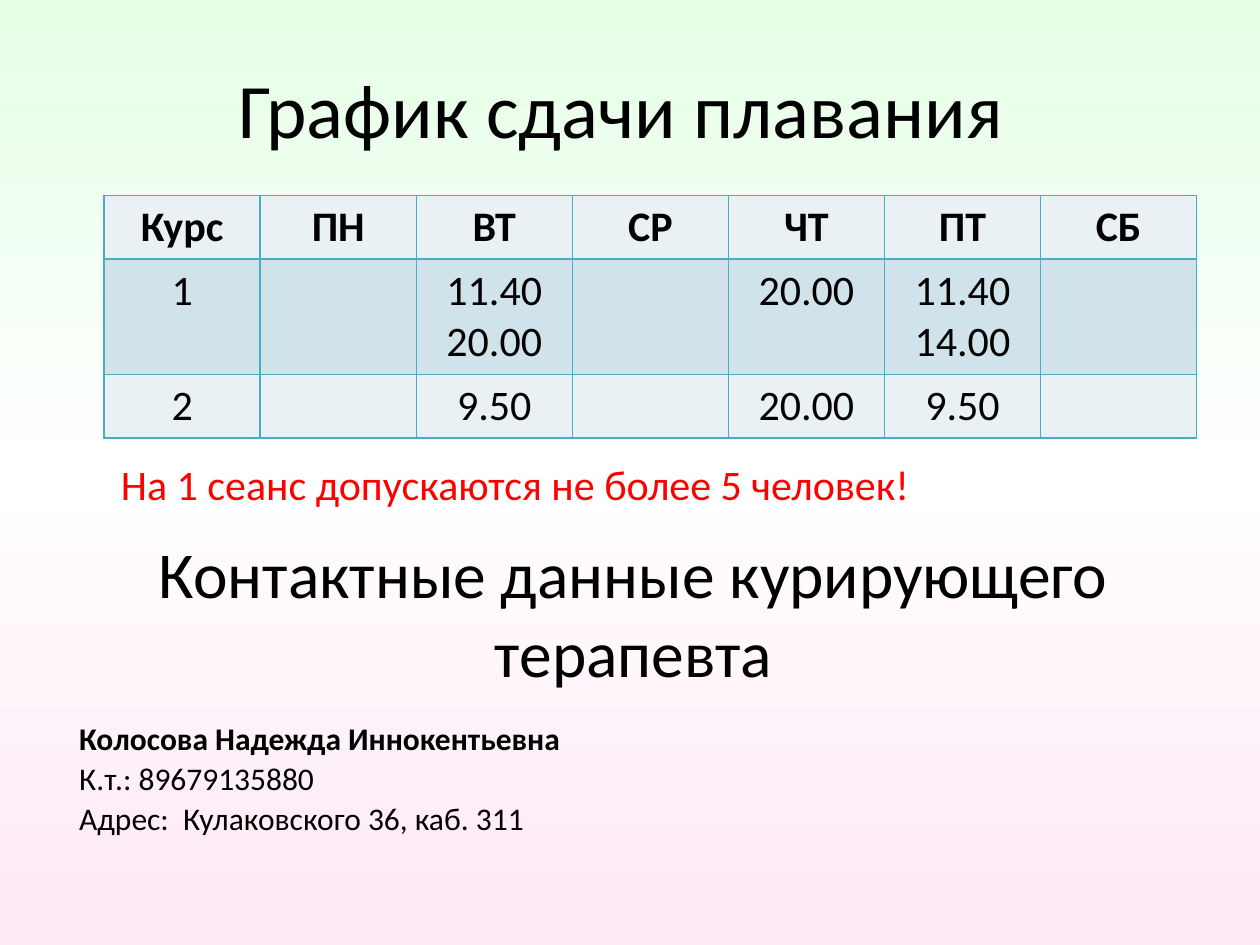
"""Build the swimming test schedule slide with the therapist's contact details."""
import copy
from dataclasses import dataclass
from typing import Any, NamedTuple

import lxml.etree
import pptx
import pptx.dml.color
import pptx.enum.text
import pptx.oxml.ns
import pptx.util

Pt = pptx.util.Pt
RGB = pptx.dml.color.RGBColor.from_string
PP_ALIGN = pptx.enum.text.PP_ALIGN
MSO_ANCHOR = pptx.enum.text.MSO_ANCHOR
qn = pptx.oxml.ns.qn


@dataclass(frozen=True)
class Theme:
    font: str = "Calibri"
    ink: str = "000000"
    alert: str = "FF0000"
    border: str = "4BACC6"
    bands: tuple[str, ...] = ("E9F1F5", "D0E3EA")
    gradient: tuple[str, ...] = ("E5FFE6", "FFFFFF", "FEE8F5")
    title: float = 44
    heading: float = 37.4
    body: float = 24
    contact: float = 18


class Line(NamedTuple):
    text: str
    size: float
    color: str
    bold: bool = False


class Block(NamedTuple):
    box: tuple[float, float, float, float]
    lines: list[Line]
    align: Any = PP_ALIGN.LEFT
    anchor: Any = MSO_ANCHOR.TOP
    spacing: float = 1.0


THEME = Theme()
TITLE = Block((36, 21.6, 648, 80),
              [Line("График сдачи плавания ", THEME.title, THEME.ink)],
              PP_ALIGN.CENTER, MSO_ANCHOR.MIDDLE)
BLOCKS = [
    Block((62, 258.5, 624, 40),
          [Line("На 1 сеанс допускаются не более 5 человек!", THEME.body, THEME.alert)]),
    Block((38.2, 309.6, 648, 80),
          [Line("Контактные данные курирующего терапевта", THEME.heading, THEME.ink)],
          PP_ALIGN.CENTER, MSO_ANCHOR.MIDDLE),
    Block((38.2, 406, 628, 76),
          [Line("Колосова Надежда Иннокентьевна", THEME.contact, THEME.ink, True),
           Line("К.т.: 89679135880", THEME.contact, THEME.ink),
           Line("Адрес:  Кулаковского 36, каб. 311", THEME.contact, THEME.ink)],
          spacing=1.06),
]
SCHEDULE = [
    ["Курс", "ПН", "ВТ", "СР", "ЧТ", "ПТ", "СБ"],
    ["1", "", "11.40\n20.00", "", "20.00", "11.40\n14.00", ""],
    ["2", "", "9.50", "", "20.00", "9.50", ""],
]
ROW_HEIGHTS = [36.5, 65.8, 36.5]
TABLE_BOX = (59.5, 111.6, 624.4, sum(ROW_HEIGHTS))


def write_lines(tf: Any, lines: list[Line], align: Any, spacing: float = 1.0) -> None:
    """Write one paragraph with one run for each line."""
    for i, line in enumerate(lines):
        p = tf.add_paragraph() if i else tf.paragraphs[0]
        p.alignment = align
        p.line_spacing = spacing
        r = p.add_run()
        r.text = line.text
        r.font.name = THEME.font
        r.font.size = Pt(line.size)
        r.font.bold = line.bold
        r.font.color.rgb = RGB(line.color)


def fill_block(sp: Any, block: Block) -> None:
    """Place a shape and write the block's text into it."""
    sp.left, sp.top, sp.width, sp.height = map(Pt, block.box)
    tf = sp.text_frame
    tf.word_wrap = True
    tf.vertical_anchor = block.anchor
    write_lines(tf, block.lines, block.align, block.spacing)


def paint_background(s: Any) -> None:
    """Fill the slide with an evenly spaced top-to-bottom gradient."""
    fill = s.background.fill
    fill.gradient()
    fill.gradient_angle = 270
    stops = next(s.element.iter(qn("a:gsLst")))
    for _ in THEME.gradient[2:]:
        stops.append(copy.deepcopy(stops[0]))
    for i, (stop, color) in enumerate(zip(fill.gradient_stops, THEME.gradient)):
        stop.color.rgb = RGB(color)
        stop.position = i / (len(THEME.gradient) - 1)


def border_cell(cell: Any) -> None:
    """Draw a thin line on all four sides of a cell."""
    props = cell._tc.get_or_add_tcPr()
    for i, side in enumerate(("a:lnL", "a:lnR", "a:lnT", "a:lnB")):
        line = lxml.etree.Element(qn(side), w=str(Pt(1)))
        solid = lxml.etree.SubElement(line, qn("a:solidFill"))
        lxml.etree.SubElement(solid, qn("a:srgbClr"), val=THEME.border)
        props.insert(i, line)


def add_schedule(s: Any) -> None:
    """Add the table of test times by course and weekday."""
    columns = len(SCHEDULE[0])
    table = s.shapes.add_table(len(SCHEDULE), columns, *map(Pt, TABLE_BOX)).table
    table.first_row = table.horz_banding = False
    for column in table.columns:
        column.width = Pt(TABLE_BOX[2] / columns)
    for i, (values, height) in enumerate(zip(SCHEDULE, ROW_HEIGHTS)):
        table.rows[i].height = Pt(height)
        for cell, value in zip(table.rows[i].cells, values):
            cell.fill.solid()
            cell.fill.fore_color.rgb = RGB(THEME.bands[i % 2])
            border_cell(cell)
            lines = [Line(t, THEME.body, THEME.ink, i == 0) for t in value.splitlines()]
            write_lines(cell.text_frame, lines, PP_ALIGN.CENTER)


def main() -> None:
    """Assemble and save the slide."""
    prs = pptx.Presentation()
    prs.slide_width, prs.slide_height = Pt(720), Pt(540)
    s = prs.slides.add_slide(prs.slide_layouts.get_by_name("Title Only"))
    paint_background(s)
    fill_block(s.shapes.title, TITLE)
    add_schedule(s)
    for block in BLOCKS:
        fill_block(s.shapes.add_textbox(*map(Pt, block.box)), block)
    prs.save("out.pptx")


if __name__ == "__main__":
    main()
